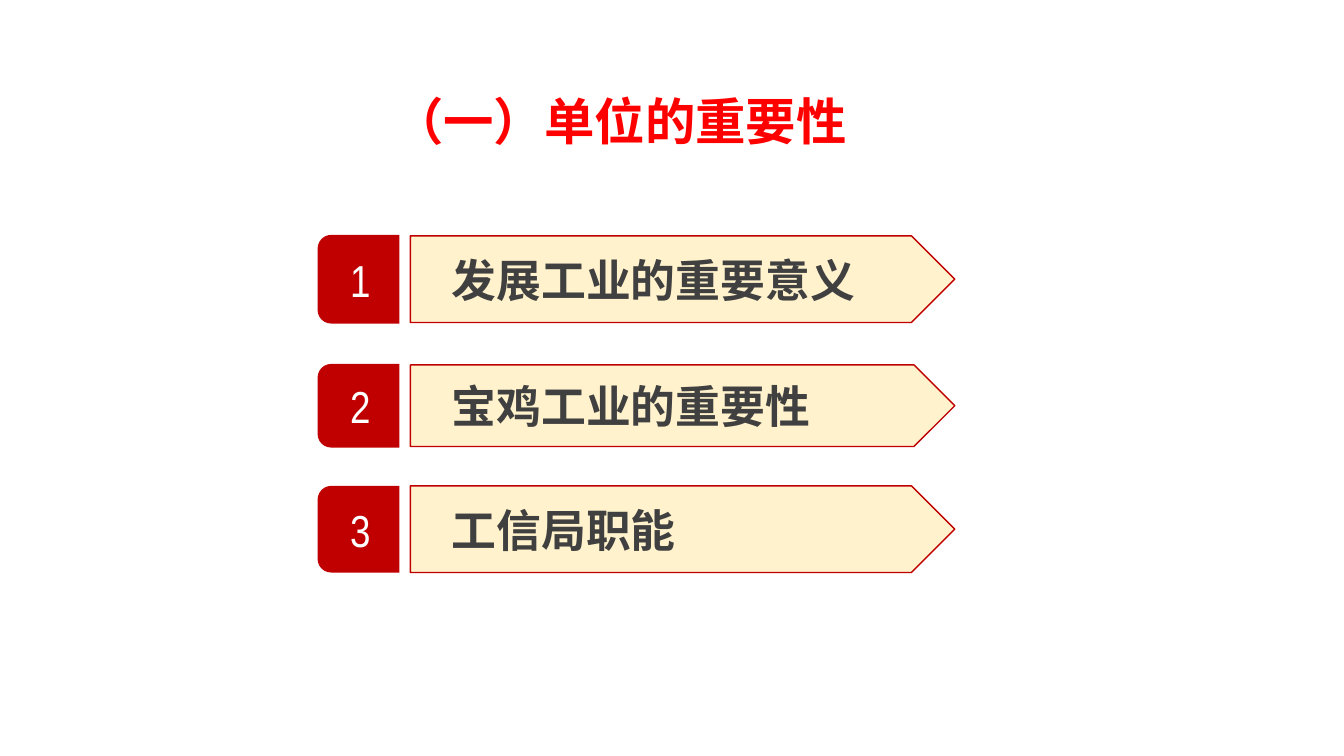
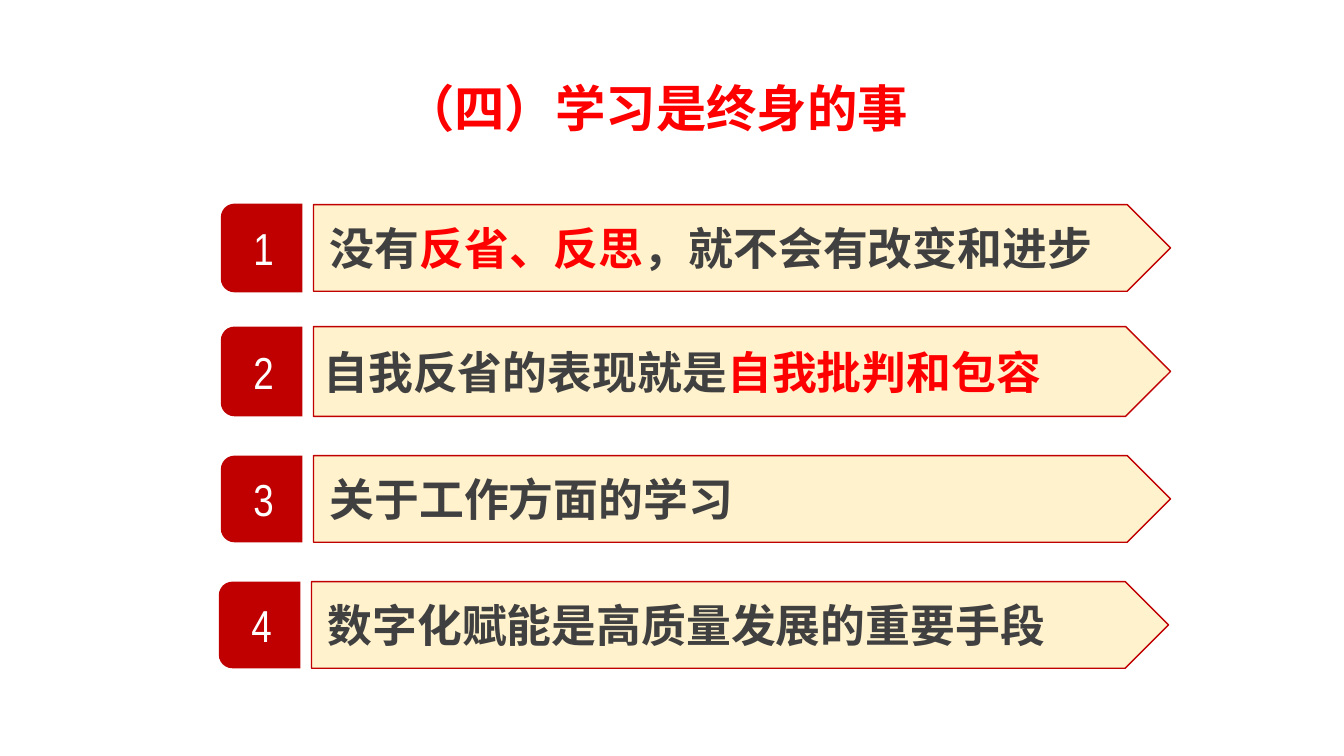
from pptx import Presentation
from pptx.dml.color import RGBColor
from pptx.enum.shapes import MSO_SHAPE
from pptx.enum.text import MSO_ANCHOR, MSO_AUTO_SIZE, PP_ALIGN
from pptx.oxml import parse_xml
from pptx.oxml.ns import nsdecls
from pptx.util import Inches, Pt

COLORS = {
    "white": "FFFFFF",
    "title": "FF0000",
    "badge": "C00000",
    "plate": "FFF2CC",
    "text": "404040",
    "accent": "FF0000",
}
CJK_FONT = "Noto Sans CJK SC"
NUMBER_FONT = "Arial Narrow"
BADGE_WIDTH = 0.81
BADGE_OFFSET = 0.92  # from the left edge of the badge to that of the plate

# Each row: plate left, top, height; badge height; text inset; (text, colour) runs
SLIDES = [
    {
        "title": "（一）单位的重要性",
        "title_box": (3.8, 0.84, 4.86, 0.71),
        "plate_width": 5.4,
        "rows": [
            (4.07, 2.34, 0.86, 0.88, 0.41, [("发展工业的重要意义", "text")]),
            (4.07, 3.62, 0.81, 0.83, 0.41, [("宝鸡工业的重要性", "text")]),
            (4.07, 4.82, 0.86, 0.86, 0.41, [("工信局职能", "text")]),
        ],
    },
    {
        "title": "（四）学习是终身的事",
        "title_box": (3.91, 0.72, 5.46, 0.71),
        "plate_width": 8.5,
        "rows": [
            (3.11, 2.03, 0.86, 0.88, 0.16,
             [("没有", "text"), ("反省、反思", "accent"),
              ("，就不会有改变和进步", "text")]),
            (3.11, 3.24, 0.89, 0.89, 0.1,
             [("自我反省的表现就是", "text"), ("自我批判和包容", "accent")]),
            (3.11, 4.52, 0.86, 0.86, 0.16, [("关于工作方面的学习", "text")]),
            (3.09, 5.77, 0.86, 0.86, 0.16,
             [("数字化赋能是高质量发展的重要手段", "text")]),
        ],
    },
]


def rgb(name):
    return RGBColor.from_string(COLORS[name])


def add_run(p, text, size, color, font=CJK_FONT, bold=True):
    r = p.add_run()
    r.text = text
    r.font.size = Pt(size)
    r.font.bold = bold
    r.font.name = font
    r.font.color.rgb = rgb(color)
    r.font._element.append(
        parse_xml(f'<a:ea {nsdecls("a")} typeface="{font}"/>'))


def add_block(slide, kind, box, fill, line=None):
    s = slide.shapes.add_shape(kind, *map(Inches, box))
    s.shadow.inherit = False
    s.fill.solid()
    s.fill.fore_color.rgb = rgb(fill)
    if line:
        s.line.color.rgb = rgb(line)
        s.line.width = Pt(1)
    else:
        s.line.fill.background()
    s.text_frame.word_wrap = True
    s.text_frame.vertical_anchor = MSO_ANCHOR.MIDDLE
    return s


def add_title(slide, text, box):
    s = add_block(slide, MSO_SHAPE.RECTANGLE, box, "white")
    tf = s.text_frame
    tf.vertical_anchor = MSO_ANCHOR.TOP
    tf.auto_size = MSO_AUTO_SIZE.SHAPE_TO_FIT_TEXT
    p = tf.paragraphs[0]
    p.alignment = PP_ALIGN.LEFT
    add_run(p, text, 36, "title")


def add_badge(slide, number, center_x, center_y, height):
    """Round the left corners by turning the shape; its text turns back upright."""
    box = (center_x - height / 2, center_y - BADGE_WIDTH / 2, height, BADGE_WIDTH)
    s = add_block(slide, MSO_SHAPE.ROUND_2_SAME_RECTANGLE, box, "badge")
    s.rotation = 270
    s.text_frame._txBody.bodyPr.set("vert", "vert")
    p = s.text_frame.paragraphs[0]
    p.alignment = PP_ALIGN.CENTER
    add_run(p, str(number), 32, "white", NUMBER_FONT, bold=False)


def add_plate(slide, box, inset, runs):
    s = add_block(slide, MSO_SHAPE.PENTAGON, box, "plate", "badge")
    s.text_frame.margin_left = Inches(inset)
    p = s.text_frame.paragraphs[0]
    p.alignment = PP_ALIGN.LEFT
    for text, color in runs:
        add_run(p, text, 32, color)


def main():
    prs = Presentation()
    prs.slide_width, prs.slide_height = Inches(13.33), Inches(7.5)
    for content in SLIDES:
        slide = prs.slides.add_slide(prs.slide_layouts[6])
        add_title(slide, content["title"], content["title_box"])
        for number, row in enumerate(content["rows"], 1):
            left, top, height, badge_height, inset, runs = row
            center_x = left - BADGE_OFFSET + BADGE_WIDTH / 2
            add_badge(slide, number, center_x, top + height / 2, badge_height)
            add_plate(slide, (left, top, content["plate_width"], height),
                      inset, runs)
    prs.save("out.pptx")


if __name__ == "__main__":
    main()
